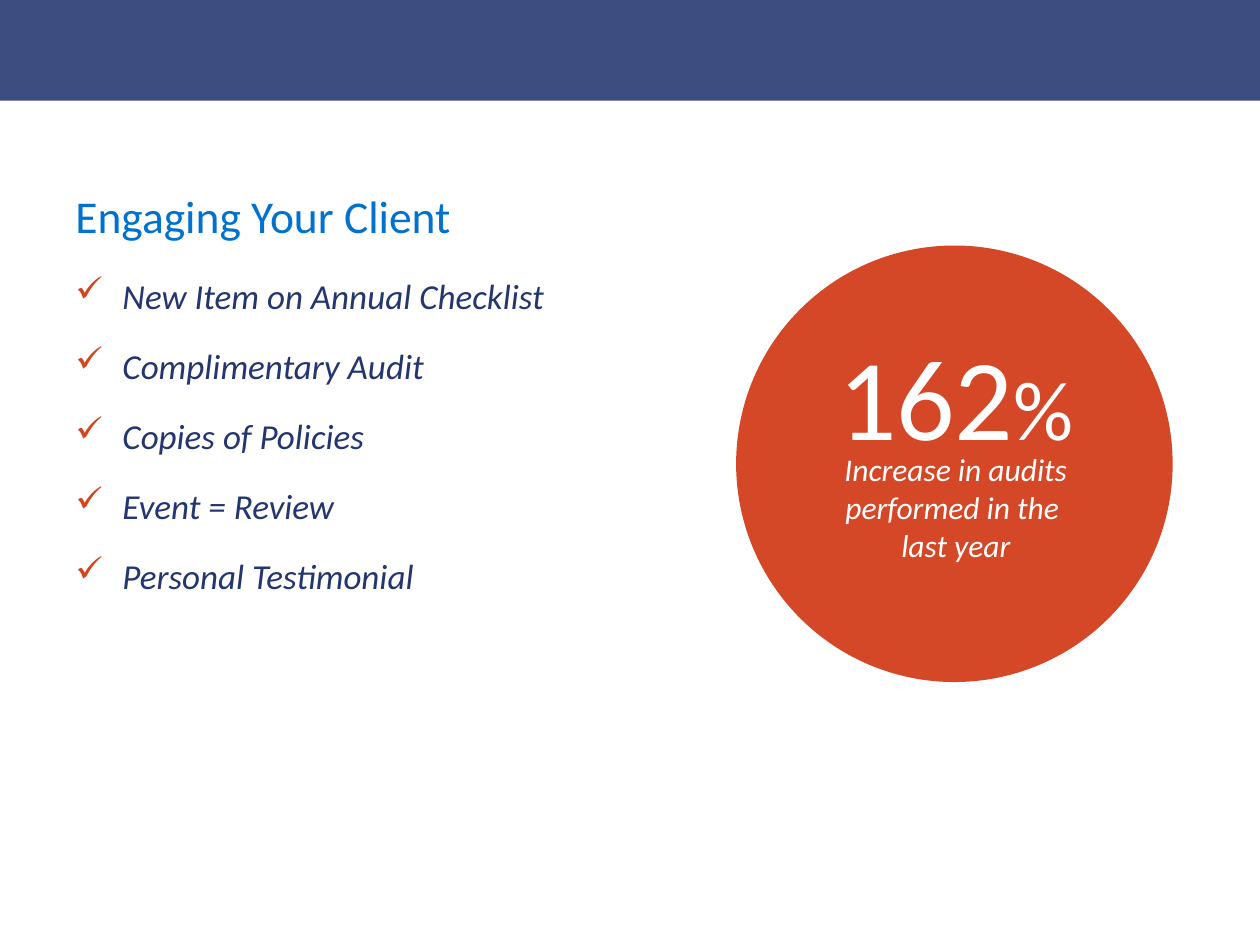
from dataclasses import dataclass

from lxml import etree
from pptx import Presentation
from pptx import util as u
from pptx.dml.color import RGBColor
from pptx.enum import shapes, text
from pptx.oxml import ns

FONT = "Calibri"
NAVY, BLUE, ORANGE, CHECK, WHITE = "24356F", "0071CE", "D44727", "D4451D", "FFFFFF"
CHECKLIST = [
    "New Item on Annual Checklist",
    "Complimentary Audit",
    "Copies of Policies",
    "Event = Review",
    "Personal Testimonial",
]


@dataclass
class Box:
    """Left, top, width and height in centimetres."""
    left: float
    top: float
    width: float
    height: float

    def lengths(self) -> list:
        return [u.Cm(v) for v in (self.left, self.top, self.width, self.height)]


@dataclass
class Style:
    size: int
    color: str
    italic: bool = False


def set_fill(fill, color: str) -> None:
    fill.solid()
    fill.fore_color.rgb = RGBColor.from_string(color)


def add_panel(slide, kind, box: Box, color: str, opacity: int = 100) -> None:
    shape = slide.shapes.add_shape(kind, *box.lengths())
    shape.shadow.inherit = False
    shape.line.fill.background()
    set_fill(shape.fill, color)
    if opacity < 100:
        color_element = shape.fill._xPr.find(".//" + ns.qn("a:srgbClr"))
        etree.SubElement(color_element, ns.qn("a:alpha"), val=str(opacity * 1000))


def add_text_frame(slide, box: Box, anchor=text.MSO_ANCHOR.TOP):
    frame = slide.shapes.add_textbox(*box.lengths()).text_frame
    frame.word_wrap = True
    frame.vertical_anchor = anchor
    return frame


def add_run(paragraph, words: str, style: Style) -> None:
    run = paragraph.add_run()
    run.text = words
    run.font.name = FONT
    run.font.size = u.Pt(style.size)
    run.font.italic = style.italic
    set_fill(run.font.fill, style.color)


def add_check_bullet(paragraph) -> None:
    properties = paragraph._p.get_or_add_pPr()
    indent = u.Cm(0.95)
    properties.set("marL", str(indent))
    properties.set("indent", str(-indent))
    bullet_color = etree.SubElement(properties, ns.qn("a:buClr"))
    etree.SubElement(bullet_color, ns.qn("a:srgbClr"), val=CHECK)
    etree.SubElement(properties, ns.qn("a:buChar"), char="✓")


def add_checklist(slide, box: Box, items: list[str], style: Style) -> None:
    frame = add_text_frame(slide, box)
    for index, item in enumerate(items):
        paragraph = frame.add_paragraph() if index else frame.paragraphs[0]
        add_check_bullet(paragraph)
        paragraph.space_before = u.Pt(4 if index else 0)
        paragraph.space_after = u.Pt(12)
        add_run(paragraph, item, style)


def main() -> None:
    presentation = Presentation()
    presentation.slide_width, presentation.slide_height = u.Cm(25.4), u.Cm(19.05)
    slide = presentation.slides.add_slide(presentation.slide_layouts[6])

    # Header band and statistic circle
    add_panel(slide, shapes.MSO_SHAPE.RECTANGLE, Box(0, 0, 25.4, 2.03), NAVY, 88)
    add_panel(slide, shapes.MSO_SHAPE.OVAL, Box(14.84, 4.95, 8.8, 8.8), ORANGE)

    # Title and checklist
    title = add_text_frame(slide, Box(1.27, 3.63, 12.3, 1.42), text.MSO_ANCHOR.MIDDLE)
    add_run(title.paragraphs[0], "Engaging Your Client", Style(26, BLUE))
    add_checklist(slide, Box(1.27, 5.41, 12.3, 10.29), CHECKLIST, Style(20, NAVY, True))

    # Statistic figure
    figure = add_text_frame(slide, Box(15.88, 6.43, 6.78, 3.07)).paragraphs[0]
    figure.alignment = text.PP_ALIGN.CENTER
    add_run(figure, "162", Style(66, WHITE))
    add_run(figure, "%", Style(48, WHITE))

    # Statistic caption
    caption_frame = add_text_frame(slide, Box(15.65, 8.94, 7.24, 2.57), text.MSO_ANCHOR.MIDDLE)
    caption_frame.margin_left = caption_frame.margin_right = u.Cm(0.5)
    caption = caption_frame.paragraphs[0]
    caption.alignment = text.PP_ALIGN.CENTER
    caption_style = Style(18, WHITE, True)
    add_run(caption, "Increase in audits performed in the ", caption_style)
    caption.add_line_break()
    add_run(caption, "last year", caption_style)

    presentation.save("out.pptx")


if __name__ == "__main__":
    main()
